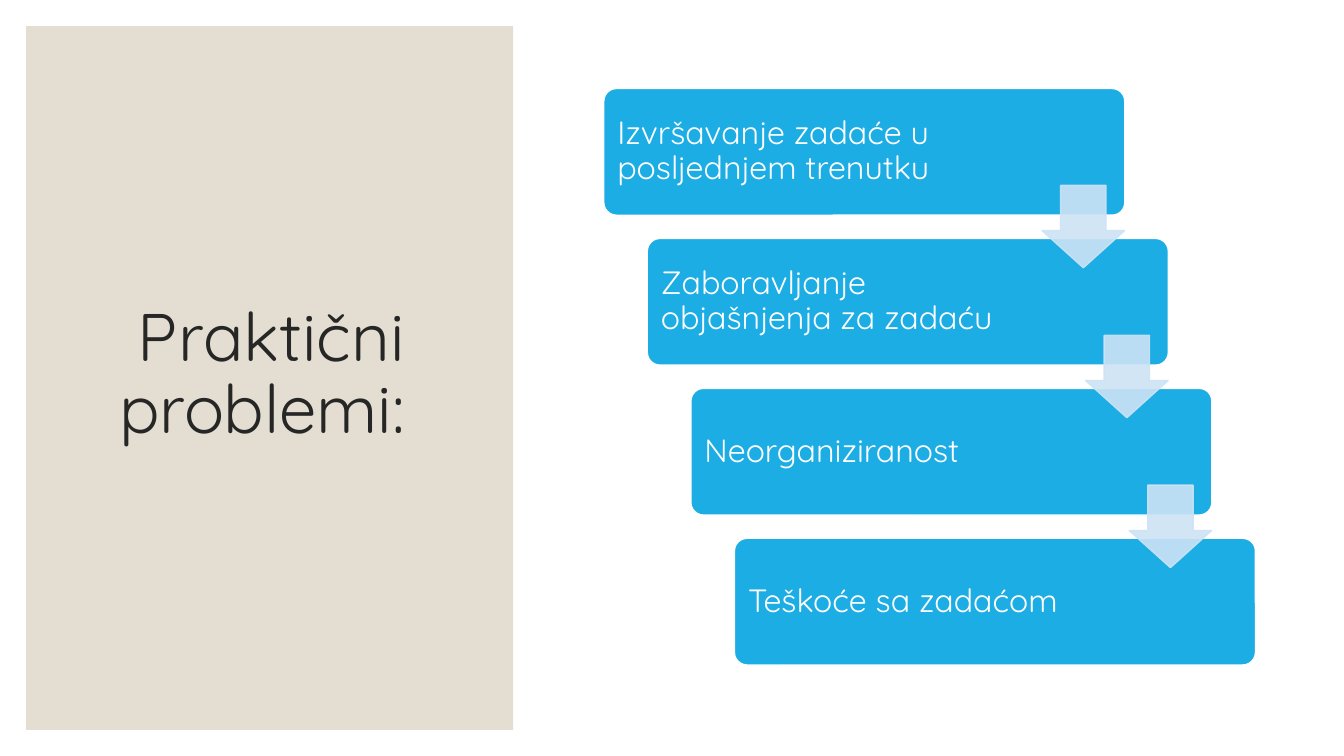
"""Build a slide with a title panel and a descending staircase of practical problems."""
from lxml.etree import SubElement
from pptx import Presentation
from pptx.dml.color import RGBColor
from pptx.enum.shapes import MSO_SHAPE
from pptx.enum.text import MSO_ANCHOR, PP_ALIGN
from pptx.oxml.ns import qn
from pptx.util import Pt

COLORS = {
    "panel": "E3DED1",
    "title": "262626",
    "step": "1CADE4",
    "white": "FFFFFF",
    "arrow": "CDE3F5",
}
FONT = "Quicksand"
PROBLEMS = [
    "Izvršavanje zadaće u posljednjem trenutku",
    "Zaboravljanje objašnjenja za zadaću",
    "Neorganiziranost",
    "Teškoće sa zadaćom",
]
STEP_LEFT, STEP_TOP = 431.3, 63.2
STEP_WIDTH, STEP_HEIGHT = 372.2, 90.5
SHIFT_X, SHIFT_Y = 31.1, 107.1
ARROW_X, ARROW_Y, ARROW_SIZE = 313.1, 69.2, 58.9


def color(name):
    """Return the named colour."""
    return RGBColor.from_string(COLORS[name])


def add_block(slide, kind, box, fill, line=None, adjustments=()):
    """Add a flat filled shape, with an outline if a line colour is given."""
    shape = slide.shapes.add_shape(kind, *map(Pt, box))
    shape.shadow.inherit = False
    for index, value in enumerate(adjustments):
        shape.adjustments[index] = value
    shape.fill.solid()
    shape.fill.fore_color.rgb = color(fill)
    if line:
        shape.line.color.rgb = color(line)
        shape.line.width = Pt(1)
    else:
        shape.line.fill.background()
    return shape


def set_text(shape, text, size, font_color, alignment):
    """Write one vertically centred paragraph into a shape."""
    frame = shape.text_frame
    frame.word_wrap = True
    frame.vertical_anchor = MSO_ANCHOR.MIDDLE
    paragraph = frame.paragraphs[0]
    paragraph.text = text
    paragraph.alignment = alignment
    paragraph.line_spacing = 0.9
    paragraph.font.name = FONT
    paragraph.font.size = Pt(size)
    paragraph.font.color.rgb = color(font_color)


def add_title(slide, text):
    """Add the side panel and the title over it."""
    add_block(slide, MSO_SHAPE.RECTANGLE, (18.7, 18.7, 347.8, 502.6), "panel")
    title = slide.shapes.add_textbox(Pt(45.4), Pt(43.9), Pt(296.6), Pt(449.3))
    set_text(title, text, 48, "title", PP_ALIGN.CENTER)


def add_step(slide, index, text):
    """Add one rounded step of the staircase."""
    box = (STEP_LEFT + index * SHIFT_X, STEP_TOP + index * SHIFT_Y, STEP_WIDTH, STEP_HEIGHT)
    step = add_block(slide, MSO_SHAPE.ROUNDED_RECTANGLE, box, "step", "white", [0.1])
    frame = step.text_frame
    frame.margin_left = frame.margin_top = frame.margin_bottom = Pt(7.2)
    frame.margin_right = Pt(97.6)
    set_text(step, text, 23, "white", PP_ALIGN.LEFT)


def add_arrow(slide, index):
    """Add the translucent arrow from one step to the next."""
    left = STEP_LEFT + ARROW_X + index * SHIFT_X
    top = STEP_TOP + ARROW_Y + index * SHIFT_Y
    box = (left, top, ARROW_SIZE, ARROW_SIZE)
    arrow = add_block(slide, MSO_SHAPE.DOWN_ARROW, box, "arrow", "arrow", [0.55, 0.45])
    for element in arrow.element.spPr.iter(qn("a:srgbClr")):
        SubElement(element, qn("a:alpha"), val="90000")


def main():
    """Build and save the presentation."""
    presentation = Presentation()
    presentation.slide_width = Pt(960)
    presentation.slide_height = Pt(540)
    slide = presentation.slides.add_slide(presentation.slide_layouts[6])
    add_title(slide, "Praktični problemi: ")
    for index, problem in enumerate(PROBLEMS):
        add_step(slide, index, problem)
    for index in range(len(PROBLEMS) - 1):
        add_arrow(slide, index)
    presentation.save("out.pptx")


if __name__ == "__main__":
    main()
